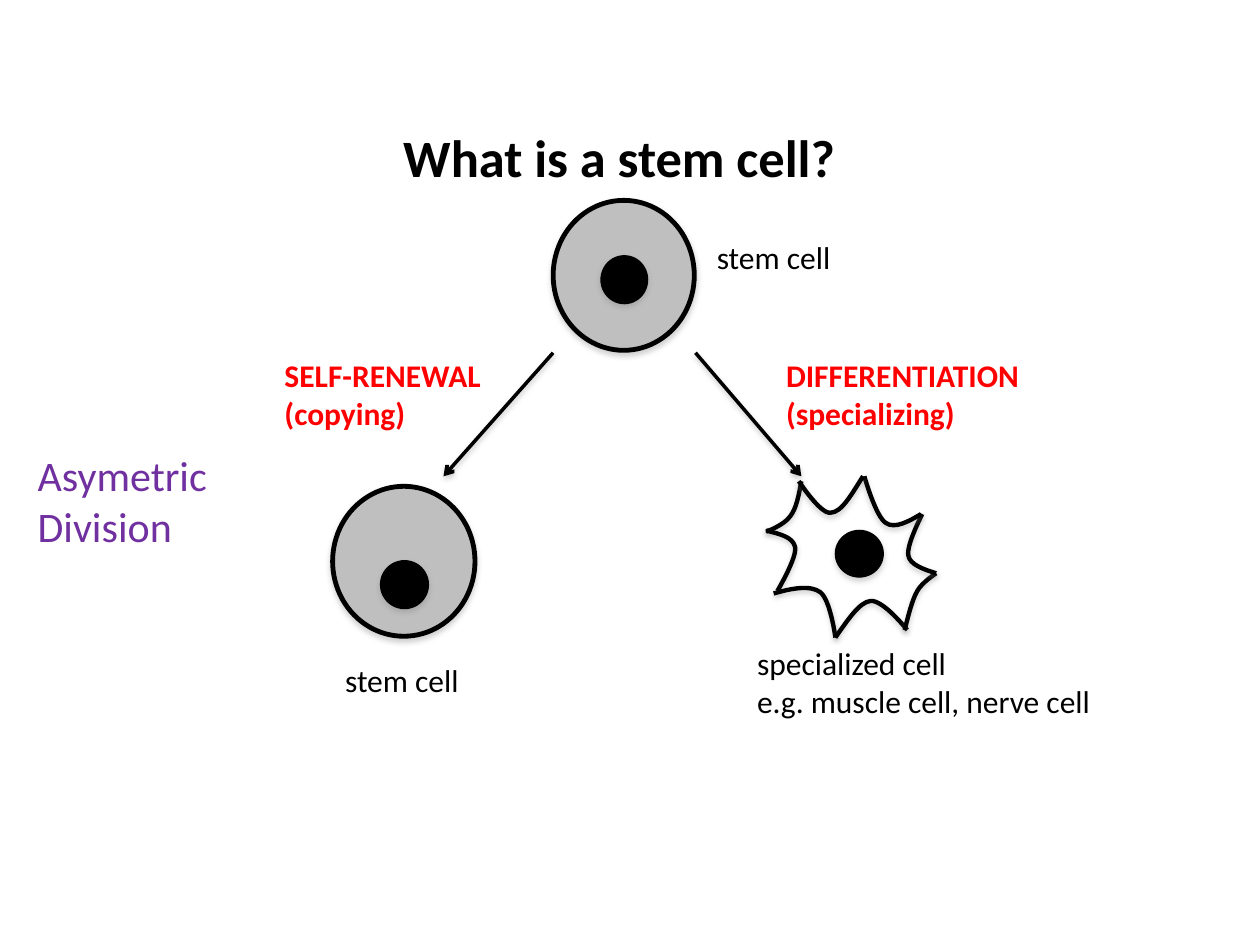
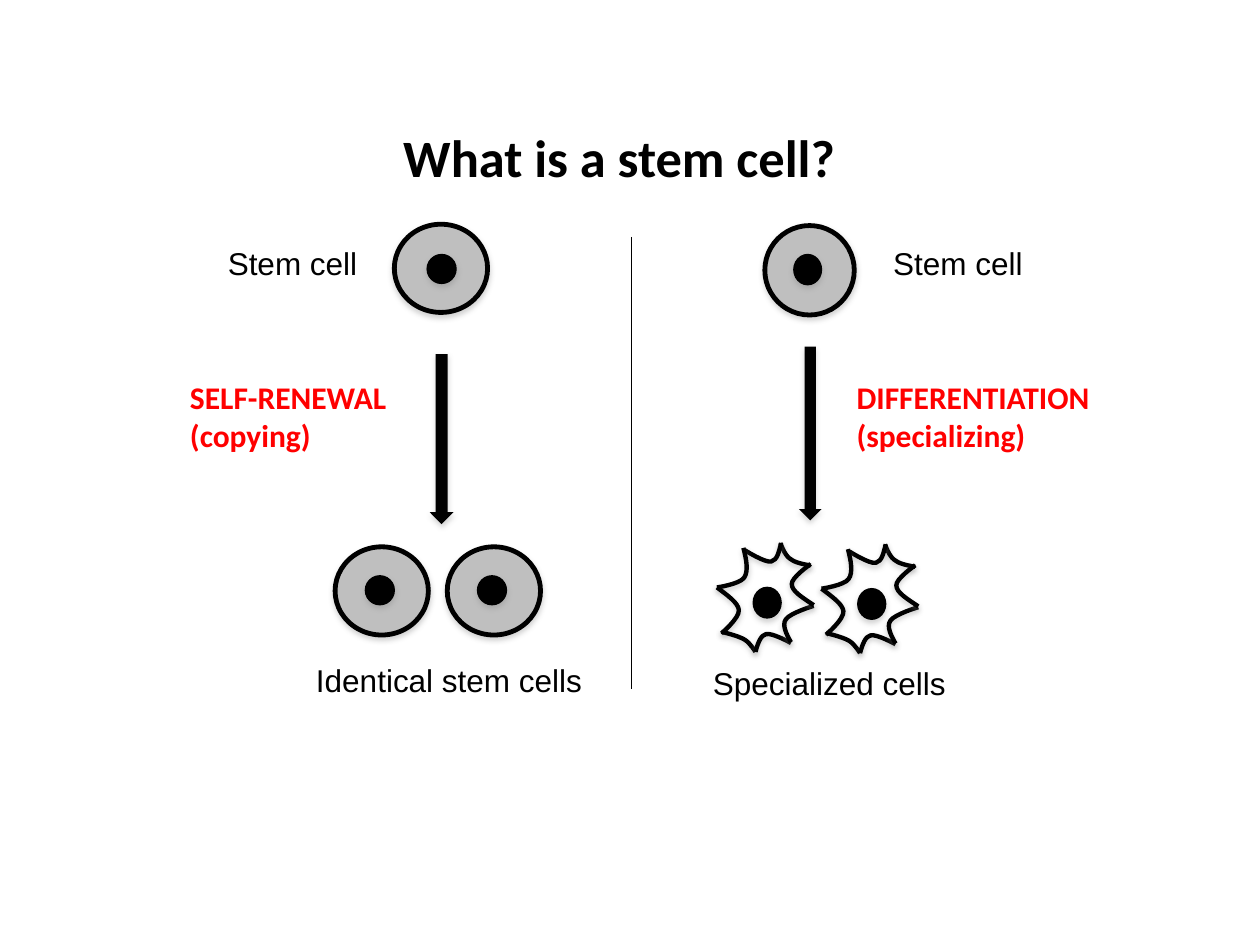
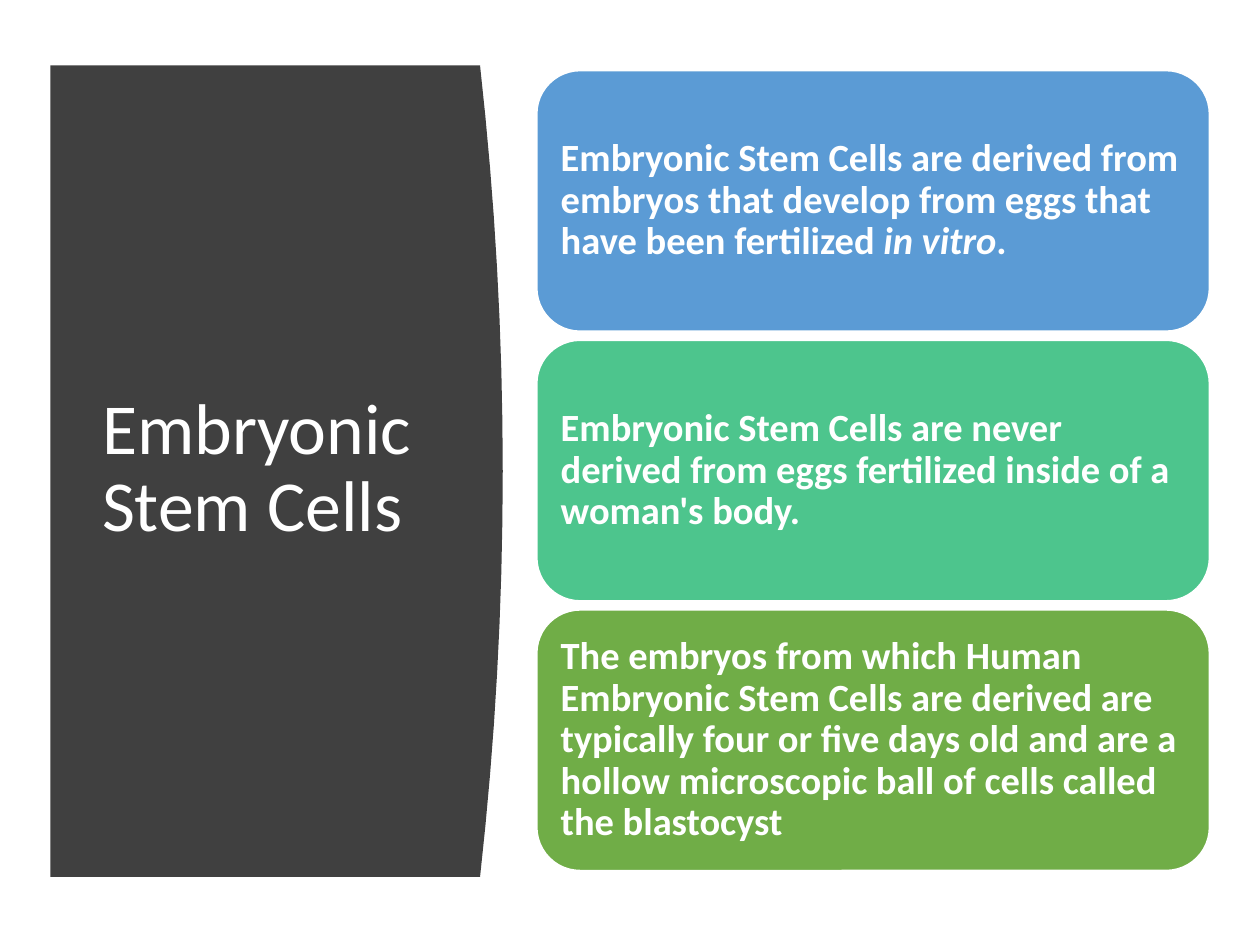
from dataclasses import dataclass

import lxml.etree
import pptx
import pptx.dml.color
import pptx.enum.shapes
import pptx.enum.text
import pptx.oxml.ns
import pptx.util

EMU_PER_PX = 9144
EDGE_STEPS = 16
SPIKY_HEIGHT = 128
SPIKY_NUCLEUS = (55, 43, 38, 37)
SPIKY_ARCS = [
    [(28, 4), (26, 15), (24, 26), (19, 32), (14, 39), (0, 44)],
    [(0, 43), (11, 46), (21, 48), (23, 56), (25, 64), (9, 91)],
    [(6, 93), (20, 89), (35, 86), (43, 92), (51, 98), (55, 128)],
    [(55, 128), (65, 114), (74, 100), (83, 99), (93, 98), (112, 122)],
    [(110, 122), (113, 110), (116, 98), (120, 91), (124, 84), (135, 77)],
    [(135, 77), (125, 74), (114, 70), (113, 63), (111, 55), (124, 30)],
    [(123, 30), (113, 36), (102, 42), (95, 37), (87, 32), (78, 0)],
    [(77, 0), (68, 14), (60, 29), (51, 29), (43, 30), (26, 4)],
]
SHAPES = pptx.enum.shapes.MSO_SHAPE
ANCHOR = pptx.enum.text.MSO_ANCHOR
AUTO_SIZE = pptx.enum.text.MSO_AUTO_SIZE
LEFT = pptx.enum.text.PP_ALIGN.LEFT


@dataclass(frozen=True)
class Theme:
    body_font: str = "Calibri"
    label_font: str = "Arial"
    ink: str = "000000"
    paper: str = "FFFFFF"
    cytoplasm: str = "BFBFBF"
    process: str = "FF0000"
    aside: str = "7030A0"
    panel: str = "404040"
    shadow: str = "808080"
    cards: tuple = ("5B9BD5", "4DC58D", "70AD47")
    title_size: int = 30
    panel_title_size: int = 41
    aside_size: int = 24
    card_size: int = 22
    label_size: int = 18
    cell_line: float = 2.75
    membrane_line: float = 2.5
    arrow_line: float = 2
    thin_line: float = 0.75
    card_line: float = 1


def px(length):
    return pptx.util.Emu(round(length * EMU_PER_PX))


def rgb(colour):
    return pptx.dml.color.RGBColor.from_string(colour)


def qualified(tag):
    return pptx.oxml.ns.qn(tag)


class Deck:
    def __init__(self, theme):
        self.theme = theme
        self.presentation = pptx.Presentation()
        self.presentation.slide_width = px(1000)
        self.presentation.slide_height = px(750)
        self.slide = None

    def new_slide(self):
        self.slide = self.presentation.slides.add_slide(self.presentation.slide_layouts[5])

    def font(self, run, size, colour, bold=False, italic=False, name=None):
        run.font.name = name or self.theme.body_font
        run.font.size = pptx.util.Pt(size)
        run.font.bold = bold
        run.font.italic = italic
        run.font.color.rgb = rgb(colour)

    def title(self, box, words, size, colour, bold=False, wrap=False, anchor=ANCHOR.TOP, spacing=1.0):
        title = self.slide.shapes.title
        title.element.getparent().append(title.element)
        title.left, title.top, title.width, title.height = map(px, box)
        frame = title.text_frame
        frame.text = words
        frame.word_wrap = wrap
        frame.auto_size = AUTO_SIZE.NONE
        frame.vertical_anchor = anchor
        paragraph = frame.paragraphs[0]
        paragraph.alignment = LEFT
        paragraph.line_spacing = spacing
        self.font(paragraph.runs[0], size, colour, bold)

    def text(self, box, words, size=None, colour=None, bold=False, name=None, wrap=False):
        frame = self.slide.shapes.add_textbox(*map(px, box)).text_frame
        frame.text = words
        frame.word_wrap = wrap
        frame.auto_size = AUTO_SIZE.SHAPE_TO_FIT_TEXT
        for paragraph in frame.paragraphs:
            self.font(paragraph.runs[0], size or self.theme.label_size,
                      colour or self.theme.ink, bold, name=name)

    def process(self, left, top, width, words):
        self.text((left, top, width, 71), words, colour=self.theme.process, bold=True)

    def paint(self, shape, fill, line, width):
        if fill:
            shape.fill.solid()
            shape.fill.fore_color.rgb = rgb(fill)
        else:
            shape.fill.background()
        self.stroke(shape, line, width)

    def stroke(self, shape, colour, width):
        if colour:
            shape.line.color.rgb = rgb(colour)
            shape.line.width = pptx.util.Pt(width)
        else:
            shape.line.fill.background()

    def effects(self, shape, opacity=0, distance=1.8):
        effects = lxml.etree.SubElement(shape.element.spPr, qualified("a:effectLst"))
        if opacity:
            shadow = lxml.etree.SubElement(
                effects, qualified("a:outerShdw"), blurRad=str(pptx.util.Pt(3.1)),
                dist=str(pptx.util.Pt(distance)), dir="5400000", rotWithShape="0")
            colour = lxml.etree.SubElement(shadow, qualified("a:srgbClr"), val=self.theme.shadow)
            lxml.etree.SubElement(colour, qualified("a:alpha"), val=str(opacity * 1000))

    def shape(self, kind, box, fill, line=None, width=0, opacity=0):
        shape = self.slide.shapes.add_shape(kind, *map(px, box))
        self.paint(shape, fill, line, width)
        self.effects(shape, opacity)
        return shape

    def freeform(self, points, fill=None, line=None, width=0, opacity=0):
        corners = [(px(x), px(y)) for x, y in points]
        builder = self.slide.shapes.build_freeform(*corners[0])
        builder.add_line_segments(corners[1:], close=bool(fill))
        shape = builder.convert_to_shape()
        self.paint(shape, fill, line, width)
        self.effects(shape, opacity, 1.6)
        return shape

    def membrane(self, points):
        shape = self.freeform(points, line=self.theme.ink, width=self.theme.membrane_line, opacity=38)
        outline = next(shape.element.spPr.iter(qualified("a:path")))
        segments = outline.findall(qualified("a:lnTo"))
        for first in range(0, len(segments), 3):
            bend = lxml.etree.SubElement(outline, qualified("a:cubicBezTo"))
            for segment in segments[first:first + 3]:
                bend.append(segment[0])
                outline.remove(segment)

    def nucleus(self, box):
        self.shape(SHAPES.OVAL, box, self.theme.ink, self.theme.ink, self.theme.thin_line, 35)

    def stem_cell(self, box, nucleus):
        self.shape(SHAPES.OVAL, box, self.theme.cytoplasm, self.theme.ink, self.theme.cell_line, 35)
        self.nucleus(nucleus)

    def spiky_cell(self, left, top, scale=(1, 1), turned=False):
        def place(point):
            x, y = point
            if turned:
                x, y = SPIKY_HEIGHT - y, x
            return left + x * scale[0], top + y * scale[1]

        for arc in SPIKY_ARCS:
            self.membrane([place(point) for point in arc + arc[-1:]])
        x, y, width, height = SPIKY_NUCLEUS
        columns, rows = zip(place((x, y)), place((x + width, y + height)))
        self.nucleus((min(columns), min(rows),
                      max(columns) - min(columns), max(rows) - min(rows)))

    def line(self, start, end, width, arrow=False):
        connector = self.slide.shapes.add_connector(
            pptx.enum.shapes.MSO_CONNECTOR.STRAIGHT, *map(px, start + end))
        self.stroke(connector, self.theme.ink, width)
        if arrow:
            stroke = connector.element.spPr.find(qualified("a:ln"))
            lxml.etree.SubElement(stroke, qualified("a:tailEnd"), type="arrow")
        self.effects(connector, 38 if arrow else 0, 1.6)

    def block_arrow(self, box):
        self.shape(SHAPES.DOWN_ARROW, box, self.theme.ink, opacity=35)

    def card(self, box, fill, pieces):
        shape = self.shape(SHAPES.ROUNDED_RECTANGLE, box, fill, self.theme.paper, self.theme.card_line)
        frame = shape.text_frame
        frame.word_wrap = True
        frame.vertical_anchor = ANCHOR.MIDDLE
        frame.margin_left = frame.margin_right = frame.margin_top = frame.margin_bottom = px(9)
        paragraph = frame.paragraphs[0]
        paragraph.alignment = LEFT
        paragraph.line_spacing = 0.9
        for index, piece in enumerate(pieces):
            run = paragraph.add_run()
            run.text = piece
            self.font(run, self.theme.card_size, self.theme.paper, True, index % 2 == 1)


def question_title(deck):
    deck.title((310, 94, 366, 61), "What is a stem cell?", deck.theme.title_size,
               deck.theme.ink, bold=True)


def asymmetric_division(deck):
    theme = deck.theme
    deck.new_slide()
    deck.stem_cell((439, 159, 112, 119), (477, 203, 37, 38))
    deck.text((559, 184, 111, 40), "stem cell")
    question_title(deck)
    deck.text((264, 520, 111, 40), "stem cell")
    deck.stem_cell((264, 386, 113, 119), (302, 445, 38, 38))
    deck.line((439, 280), (352, 378), theme.arrow_line, arrow=True)
    deck.process(216, 278, 177, "SELF-RENEWAL\n(copying)")
    deck.line((552, 280), (636, 378), theme.arrow_line, arrow=True)
    deck.spiky_cell(608, 378)
    deck.text((591, 506, 288, 71), "specialized cell\ne.g. muscle cell, nerve cell")
    deck.process(614, 278, 207, "DIFFERENTIATION\n(specializing)")
    deck.text((20, 352, 178, 91), "Asymetric Division", theme.aside_size, theme.aside, wrap=True)


def symmetric_divisions(deck):
    theme = deck.theme
    deck.new_slide()
    question_title(deck)
    for left, top, width, words in (
        (241, 520, 233, "Identical stem cells"),
        (171, 189, 124, "Stem cell"),
        (699, 189, 124, "Stem cell"),
        (556, 522, 207, "Specialized cells"),
    ):
        deck.text((left, top, width, 40), words, name=theme.label_font)
    deck.stem_cell((313, 178, 74, 70), (339, 202, 23, 23))
    for left in (355, 266):
        deck.stem_cell((left, 434, 74, 70), (left + 24, 457, 23, 23))
    deck.block_arrow((341, 281, 19, 135))
    deck.process(141, 295, 177, "SELF-RENEWAL\n(copying)")
    deck.stem_cell((607, 179, 71, 71), (630, 202, 22, 24))
    deck.block_arrow((634, 275, 18, 138))
    for left, top in ((652, 432), (569, 431)):
        deck.spiky_cell(left, top, scale=(0.6, 0.64), turned=True)
    deck.line((501, 188), (501, 547), theme.thin_line)
    deck.process(670, 295, 207, "DIFFERENTIATION\n(specializing)")


def embryonic_stem_cells(deck):
    theme = deck.theme
    deck.new_slide()
    steps = [step / EDGE_STEPS for step in range(EDGE_STEPS + 1)]
    edge = [(381 + 72 * step * (1 - step), 52 + 644 * step) for step in steps]
    deck.freeform([(40, 52)] + edge + [(40, 696)], theme.panel)
    deck.title((71, 111, 280, 524), "Embryonic Stem Cells", theme.panel_title_size, theme.paper,
               wrap=True, anchor=ANCHOR.MIDDLE, spacing=0.9)
    facts = (
        ("Embryonic Stem Cells are derived from embryos that develop from eggs that "
         "have been fertilized ", "in vitro", "."),
        ("Embryonic Stem Cells are never derived from eggs fertilized inside of a woman's body.",),
        ("The embryos from which Human Embryonic Stem Cells are derived are typically four or "
         "five days old and are a hollow microscopic ball of cells called the blastocyst",),
    )
    for index, (fill, pieces) in enumerate(zip(theme.cards, facts)):
        deck.card((426, 56 + 214 * index, 534, 207), fill, pieces)


def main():
    deck = Deck(Theme())
    asymmetric_division(deck)
    symmetric_divisions(deck)
    embryonic_stem_cells(deck)
    deck.presentation.save("out.pptx")


if __name__ == "__main__":
    main()
